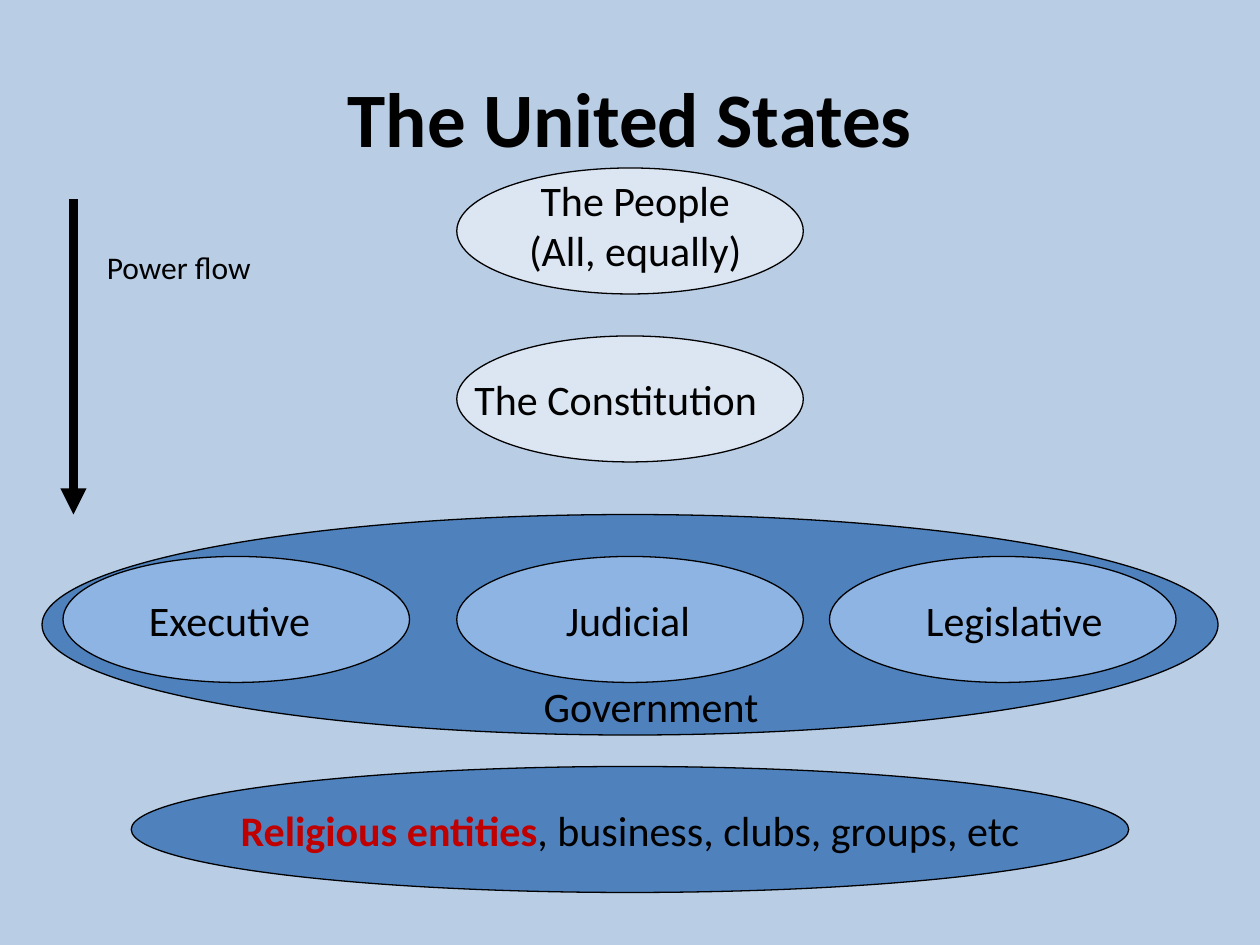
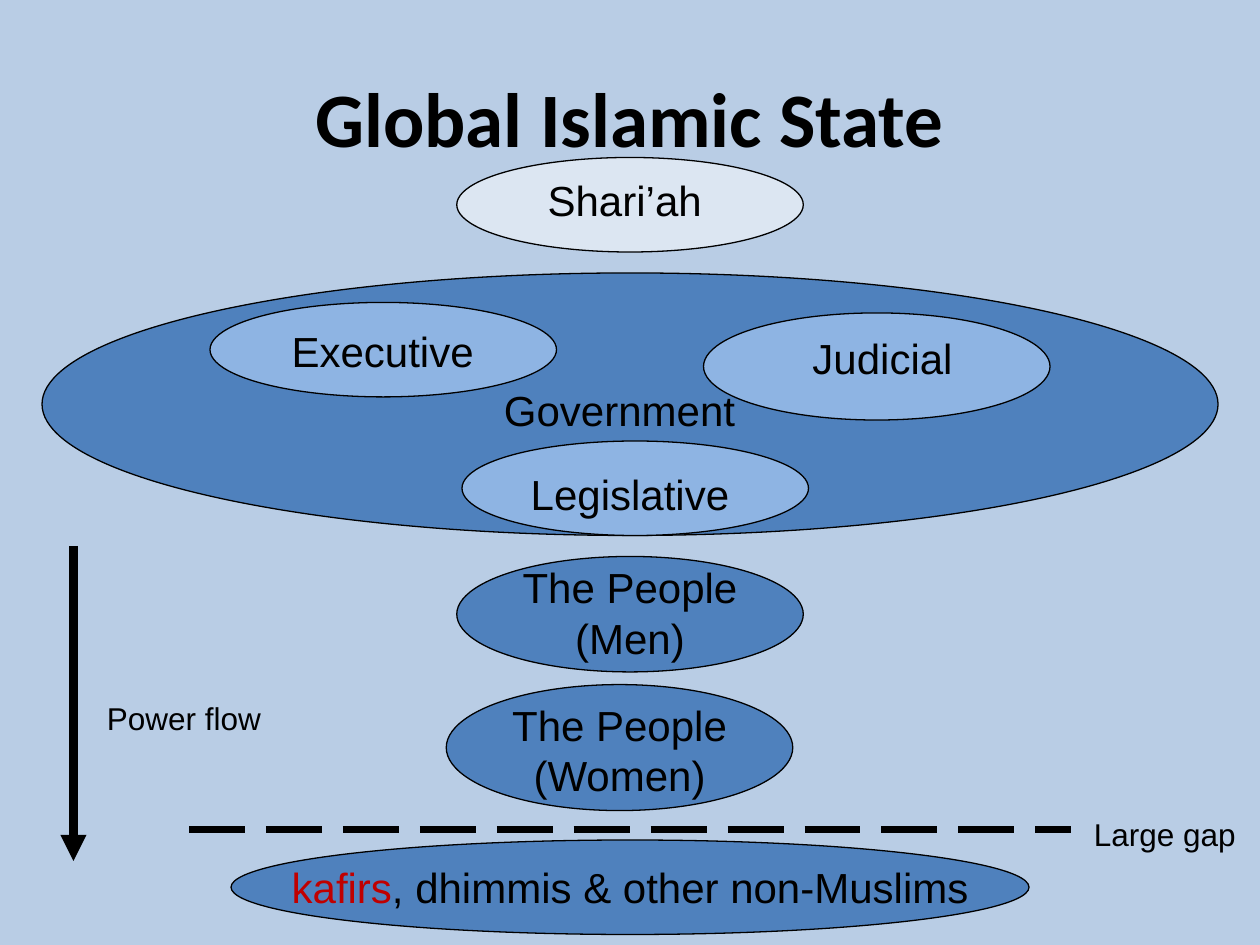
from dataclasses import dataclass

from lxml.etree import SubElement
from pptx import Presentation
from pptx.dml.color import RGBColor
from pptx.enum.dml import MSO_LINE_DASH_STYLE as Dash
from pptx.enum.shapes import MSO_CONNECTOR as Connector, MSO_SHAPE as Shape
from pptx.enum.text import MSO_ANCHOR as Anchor, PP_ALIGN as Align
from pptx.oxml.ns import qn
from pptx.util import Pt

PX = 7620  # EMU per px, 120 px to the inch
OVAL_W = 330
TITLE_ONLY = 5


@dataclass(frozen=True)
class Theme:
    background: str = "B9CDE5"
    source: str = "DCE6F2"
    body: str = "4F81BD"
    branch: str = "8EB4E3"
    ink: str = "000000"
    accent: str = "C00000"
    title_font: str = "Calibri"
    title_size: int = 44
    label_size: int = 24
    note_size: int = 18
    outline: float = 0.75
    arrow: int = 5
    divider: int = 4


def px(*lengths):
    return [length * PX for length in lengths]


def rgb(code):
    return RGBColor.from_string(code)


def write(frame, *parts, font, size, color, bold=False, align=Align.CENTER):
    """Write one paragraph; a part is a string or a (string, colour, bold) tuple."""
    paragraph = frame.paragraphs[0]
    paragraph.alignment = align
    for part in parts:
        words, ink, weight = (part, color, bold) if isinstance(part, str) else part
        run = paragraph.add_run()
        run.text = words
        run.font.name, run.font.size, run.font.bold = font, Pt(size), weight
        run.font.color.rgb = rgb(ink)


class PowerChart:
    """Holds the theme and the slide being drawn."""

    def __init__(self, theme):
        self.theme = theme
        self.deck = Presentation()
        self.deck.slide_width, self.deck.slide_height = px(1200, 900)
        backdrop = self.deck.slide_master.background.fill
        backdrop.solid()
        backdrop.fore_color.rgb = rgb(theme.background)

    def start(self, title, font):
        self.slide = self.deck.slides.add_slide(self.deck.slide_layouts[TITLE_ONLY])
        self.font = font
        heading = self.slide.shapes.title
        heading.left, heading.top, heading.width, heading.height = px(60, 36, 1080, 150)
        heading.text_frame.vertical_anchor = Anchor.MIDDLE
        write(heading.text_frame, title, font=self.theme.title_font,
              size=self.theme.title_size, color=self.theme.ink, bold=True)

    def oval(self, left, top, width, height, color):
        ellipse = self.slide.shapes.add_shape(Shape.OVAL, *px(left, top, width, height))
        ellipse.shadow.inherit = False
        ellipse.fill.solid()
        ellipse.fill.fore_color.rgb = rgb(color)
        ellipse.line.color.rgb = rgb(self.theme.ink)
        ellipse.line.width = Pt(self.theme.outline)

    def label(self, left, top, width, *parts, height=60, size=None, align=Align.CENTER):
        box = self.slide.shapes.add_textbox(*px(left, top, width, height))
        box.text_frame.word_wrap = True
        write(box.text_frame, *parts, font=self.font, color=self.theme.ink,
              size=size or self.theme.label_size, align=align)

    def note(self, left, top, width, words):
        self.label(left, top, width, words, height=48,
                   size=self.theme.note_size, align=Align.LEFT)

    def rule(self, start, end, width):
        connector = self.slide.shapes.add_connector(
            Connector.STRAIGHT, *px(*start, *end))
        connector.line.color.rgb = rgb(self.theme.ink)
        connector.line.width = Pt(width)
        SubElement(connector._element.spPr, qn("a:effectLst"))
        return connector.line

    def power_flow(self, top, bottom, note_top):
        arrow = self.rule((70, top), (70, bottom), self.theme.arrow)
        SubElement(arrow._get_or_add_ln(), qn("a:tailEnd"), type="triangle")
        self.note(90, note_top, 300, "Power flow")

    def divider(self, left, right, y):
        self.rule((left, y), (right, y), self.theme.divider).dash_style = Dash.LONG_DASH


def draw_united_states(chart):
    theme = chart.theme
    chart.start("The United States", "Calibri")
    chart.oval(40, 490, 1120, 210, theme.body)
    for top in (160, 320):
        chart.oval(435, top, OVAL_W, 120, theme.source)
    chart.label(480, 160, 250, "The People (All, equally)", height=108)
    chart.label(440, 350, 320, "The Constitution", align=Align.LEFT)

    branches = (
        (60, 130, 190, "Executive"),
        (435, 527, 150, "Judicial"),
        (790, 870, 200, "Legislative"),
    )
    for oval_left, label_left, label_width, branch in branches:
        chart.oval(oval_left, 530, OVAL_W, 120, theme.branch)
        chart.label(label_left, 560, label_width, branch, align=Align.LEFT)
    chart.label(390, 642, 460, "Government")

    chart.oval(125, 730, 950, 120, theme.body)
    chart.label(215, 760, 770, ("Religious entities", theme.accent, True),
                ", business, clubs, groups, etc")
    chart.power_flow(190, 490, 230)


def draw_islamic_state(chart):
    theme = chart.theme
    chart.start("Global Islamic State", "Arial")
    chart.oval(435, 150, OVAL_W, 90, theme.source)
    chart.label(480, 160, 230, "Shari’ah")

    chart.oval(40, 260, 1120, 250, theme.body)
    branches = (
        (670, 298, 102, 760, 311, 161, "Judicial"),
        (200, 288, 90, 259, 304, 211, "Executive"),
        (440, 420, 90, 475, 440, 250, "Legislative"),
    )
    for left, top, height, label_left, label_top, label_width, branch in branches:
        chart.oval(left, top, OVAL_W, height, theme.branch)
        chart.label(label_left, label_top, label_width, branch)
    chart.label(360, 360, 460, "Government")

    people = (
        (435, 530, 110, 440, 529, "The People (Men)"),
        (425, 652, 120, 430, 660, "The People (Women)"),
    )
    for left, top, height, label_left, label_top, group in people:
        chart.oval(left, top, OVAL_W, height, theme.body)
        chart.label(label_left, label_top, 320, group, height=108)

    chart.oval(220, 800, 760, 90, theme.body)
    chart.label(220, 815, 760, ("kafirs", theme.accent, False),
                ", dhimmis & other non-Muslims")
    chart.power_flow(520, 820, 660)
    chart.divider(180, 1020, 790)
    chart.note(1030, 770, 170, "Large gap")


def main():
    chart = PowerChart(Theme())
    draw_united_states(chart)
    draw_islamic_state(chart)
    chart.deck.save("out.pptx")


if __name__ == "__main__":
    main()
